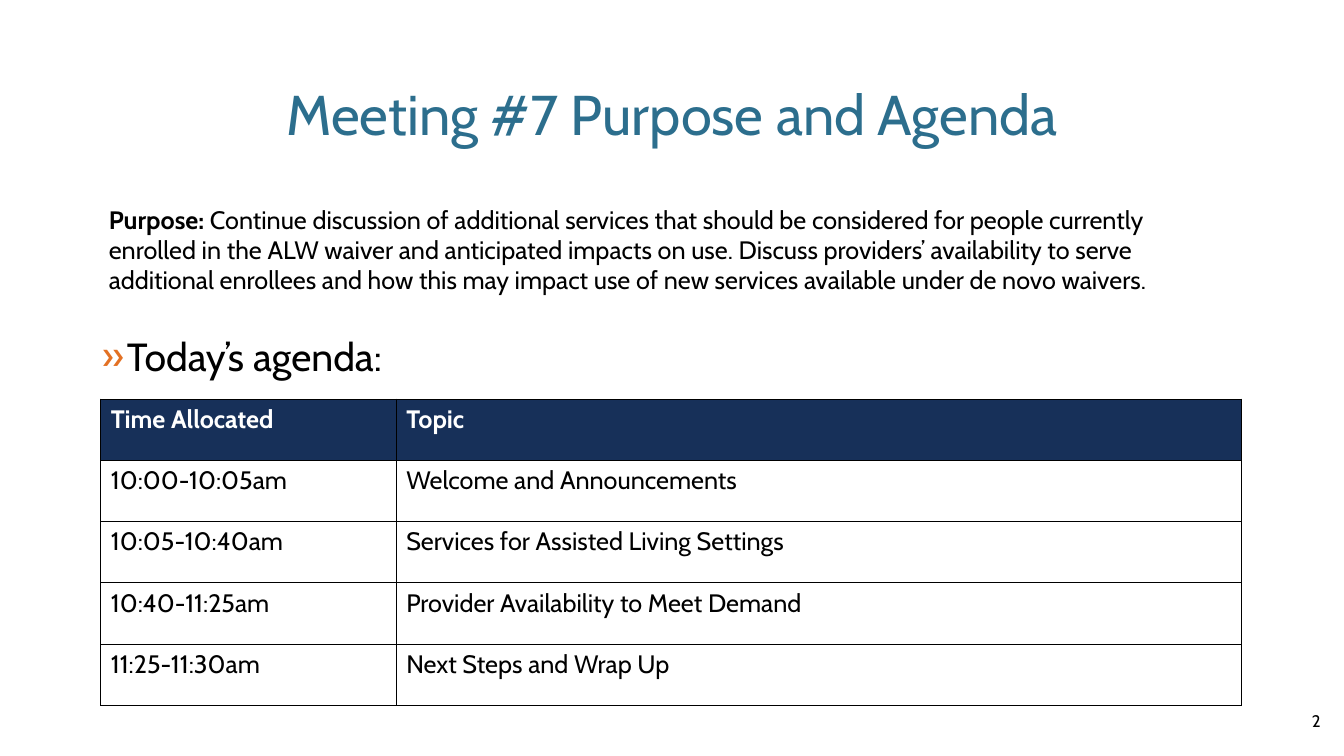
from lxml import etree
from pptx import Presentation
from pptx.dml.color import RGBColor
from pptx.enum.shapes import MSO_SHAPE
from pptx.enum.text import MSO_ANCHOR, PP_ALIGN
from pptx.oxml import parse_xml
from pptx.oxml.ns import qn
from pptx.util import Pt

ROUND = MSO_SHAPE.ROUNDED_RECTANGLE
TOP, MIDDLE = MSO_ANCHOR.TOP, MSO_ANCHOR.MIDDLE
LEFT, CENTER, RIGHT = PP_ALIGN.LEFT, PP_ALIGN.CENTER, PP_ALIGN.RIGHT

FONT = "Cabin"
COLORS = {"title": "2C6E8D", "text": "000000", "paper": "FFFFFF",
          "head": "173059", "mark": "E37124", "rule": "000000"}

PURPOSE = (
    "Continue discussion of additional services that should be considered "
    "for people currently enrolled in the ALW waiver and anticipated impacts "
    "on use. Discuss providers’ availability to serve additional enrollees "
    "and how this may impact use of new services available under de novo "
    "waivers.")
AGENDA = [
    ("Time Allocated", "Topic"),
    ("10:00-10:05am", "Welcome and Announcements"),
    ("10:05-10:40am", "Services for Assisted Living Settings"),
    ("10:40-11:25am", "Provider Availability to Meet Demand"),
    ("11:25-11:30am", "Next Steps and Wrap Up"),
]
COLS = (211, 604)
ROW = 43.75


def color(name):
    return RGBColor.from_string(COLORS[name])


def add_run(para, text, size, shade="text", bold=False):
    run = para.add_run()
    run.text = text
    style = {"name": FONT, "size": Pt(size), "bold": bold}
    for key, value in style.items():
        setattr(run.font, key, value)
    run.font.color.rgb = color(shade)


def set_frame(frame, anchor, align):
    """Set wrapping and alignment, and return the first paragraph."""
    frame.word_wrap = True
    frame.vertical_anchor = anchor
    para = frame.paragraphs[0]
    para.alignment = align
    return para


def add_label(slide, area, text, size, shade, anchor, align):
    box = slide.shapes.add_textbox(*map(Pt, area))
    para = set_frame(box.text_frame, anchor, align)
    add_run(para, text, size, shade)
    return para


def add_bullet(para, mark, indent):
    props = para._p.get_or_add_pPr()
    props.set("marL", str(Pt(indent)))
    props.set("indent", str(-Pt(indent)))
    tint = etree.SubElement(props, qn("a:buClr"))
    etree.SubElement(tint, qn("a:srgbClr"), val=COLORS["mark"])
    etree.SubElement(props, qn("a:buFont"), typeface=FONT)
    etree.SubElement(props, qn("a:buChar"), char=mark)


def add_purpose(slide, area):
    panel = slide.shapes.add_shape(ROUND, *map(Pt, area))
    panel.shadow.inherit = False
    panel.fill.solid()
    panel.fill.fore_color.rgb = color("paper")
    panel.line.color.rgb = color("paper")
    panel.line.width = Pt(0.5)
    para = set_frame(panel.text_frame, MIDDLE, LEFT)
    add_run(para, "Purpose: ", 18, bold=True)
    add_run(para, PURPOSE, 18)


def add_borders(cell):
    props = cell._tc.get_or_add_tcPr()
    space = "http://schemas.openxmlformats.org/drawingml/2006/main"
    for side in "LRTB":
        props.append(parse_xml(
            f'<a:ln{side} xmlns:a="{space}" w="{Pt(0.5)}"><a:solidFill>'
            f'<a:srgbClr val="{COLORS["rule"]}"/></a:solidFill></a:ln{side}>'))


def add_agenda(slide, left, top):
    frame = slide.shapes.add_table(
        len(AGENDA), len(COLS), Pt(left), Pt(top),
        Pt(sum(COLS)), Pt(ROW * len(AGENDA)))
    table = frame.table
    for col, width in zip(table.columns, COLS):
        col.width = Pt(width)
    for i, texts in enumerate(AGENDA):
        table.rows[i].height = Pt(ROW)
        head = i == 0
        for j, text in enumerate(texts):
            cell = table.cell(i, j)
            add_borders(cell)
            cell.fill.solid()
            cell.fill.fore_color.rgb = color("head" if head else "paper")
            add_run(cell.text_frame.paragraphs[0], text, 18,
                    "paper" if head else "text", head)


def main():
    deck = Presentation()
    deck.slide_width, deck.slide_height = Pt(960), Pt(540)
    slide = deck.slides.add_slide(deck.slide_layouts[6])
    add_label(slide, (66, 29, 828, 104), "Meeting #7 Purpose and Agenda",
              40, "title", MIDDLE, CENTER)
    add_purpose(slide, (66, 130, 828, 96))
    today = add_label(slide, (65.5, 234, 828, 45), "Today’s agenda:",
                      28, "text", TOP, LEFT)
    today.space_after = Pt(6)
    add_bullet(today, "»", 18)
    add_agenda(slide, 72, 285)
    add_label(slide, (734.5, 500.5, 216, 29), "2", 12, "text", MIDDLE, RIGHT)
    deck.save("out.pptx")


if __name__ == "__main__":
    main()
